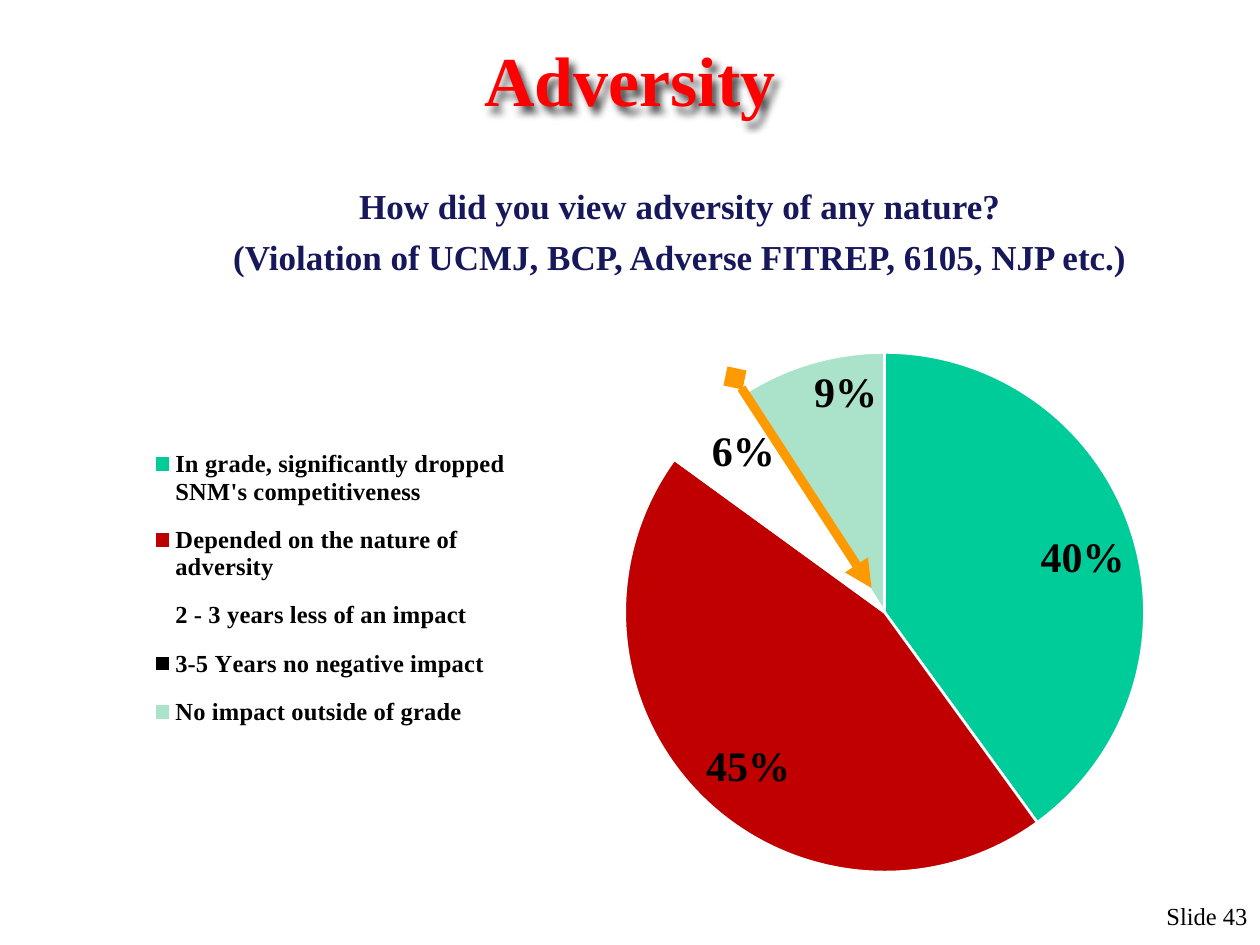
import pptx
import pptx.util
import pptx.chart.data
import pptx.dml.color
import pptx.enum.chart
import pptx.enum.shapes
import pptx.enum.text
import pptx.oxml
import pptx.oxml.ns

RGBColor = pptx.dml.color.RGBColor
Align = pptx.enum.text.PP_ALIGN
Anchor = pptx.enum.text.MSO_ANCHOR

RED = RGBColor(0xFF, 0x00, 0x00)
NAVY = RGBColor(0x17, 0x17, 0x5C)
BLACK = RGBColor(0x00, 0x00, 0x00)
WHITE = RGBColor(0xFF, 0xFF, 0xFF)
ORANGE = RGBColor(0xFF, 0x99, 0x00)
GREEN = RGBColor(0x00, 0xCC, 0x99)
CRIMSON = RGBColor(0xC0, 0x00, 0x00)
MINT = RGBColor(0xAA, 0xE2, 0xCA)
DARK_RED = RGBColor(0x8E, 0x00, 0x00)

ANSWERS = [
    ("In grade, significantly dropped SNM's competitiveness", 0.40, GREEN),
    ("Depended on the nature of adversity", 0.45, CRIMSON),
    ("2 - 3 years less of an impact", 0.06, WHITE),
    ("3-5 Years no negative impact", 0, BLACK),
    ("No impact outside of grade", 0.09, MINT),
]


def xml(text, prefix="a"):
    """Parse an element, declaring its namespace on the first tag."""
    tag_end = min(text.index(mark) for mark in " />" if mark in text[1:])
    return pptx.oxml.parse_xml(
        text[:tag_end] + " " + pptx.oxml.ns.nsdecls(prefix) + text[tag_end:])


class SlideBuilder:
    """Places elements on a grid of 120 columns by 90 rows."""

    FONT = "Times New Roman"
    COLUMNS, ROWS = 120, 90

    def __init__(self, deck):
        self.slide = deck.slides.add_slide(deck.slide_layouts[6])
        self.column = deck.slide_width / self.COLUMNS
        self.row = deck.slide_height / self.ROWS

    def grid(self, *lengths):
        units = (self.column, self.row) * 2
        return [round(length * unit) for length, unit in zip(lengths, units)]

    def style(self, font, size, color, bold=True):
        font.name = self.FONT
        font.size = pptx.util.Pt(size)
        font.bold = bold
        font.color.rgb = color

    def text(self, area, lines, size, color, align, bold=True,
             anchor=Anchor.TOP, gap=0):
        box = self.slide.shapes.add_textbox(*self.grid(*area))
        frame = box.text_frame
        frame.word_wrap = True
        frame.vertical_anchor = anchor
        frame.text = "\n".join(lines)
        for index, paragraph in enumerate(frame.paragraphs):
            paragraph.alignment = align
            if index:
                paragraph.space_before = pptx.util.Pt(gap)
            for run in paragraph.runs:
                self.style(run.font, size, color, bold)
        return box

    def title(self, area, wording):
        box = self.text(area, [wording], 40, RED, Align.CENTER, anchor=Anchor.MIDDLE)
        # Thin outline on the letters and a soft shadow behind them
        letters = box.text_frame.paragraphs[0].runs[0].font
        outline = xml(f'<a:ln w="9525"><a:solidFill><a:srgbClr val="{DARK_RED}"/>'
                      '</a:solidFill></a:ln>')
        letters._element.insert(0, outline)
        box._element.spPr.append(xml(
            '<a:effectLst><a:outerShdw blurRad="50800" dist="50800" dir="3000000">'
            '<a:srgbClr val="000000"><a:alpha val="70000"/></a:srgbClr>'
            '</a:outerShdw></a:effectLst>'))

    def layout(self, x, y, w, h, inner=False):
        target = '<c:layoutTarget val="inner"/>' if inner else ""
        return xml(
            f'<c:layout><c:manualLayout>{target}<c:xMode val="edge"/>'
            f'<c:yMode val="edge"/><c:x val="{x}"/><c:y val="{y}"/>'
            f'<c:w val="{w}"/><c:h val="{h}"/></c:manualLayout></c:layout>', "c")

    def pie(self, area, answers):
        names, shares, colors = zip(*answers)
        data = pptx.chart.data.CategoryChartData(number_format="0%")
        data.categories = names
        data.add_series("Series 1", shares)
        chart = self.slide.shapes.add_chart(
            pptx.enum.chart.XL_CHART_TYPE.PIE, *self.grid(*area), data).chart
        chart.has_title = False
        chart.font.name = "Arial"
        chart.font.size = pptx.util.Pt(10)
        chart.font.color.rgb = BLACK

        # Slices
        plot = chart.plots[0]
        plot.vary_by_categories = True
        for index, color in enumerate(colors):
            slice_format = plot.series[0].points[index].format
            slice_format.fill.solid()
            slice_format.fill.fore_color.rgb = color
            slice_format.line.color.rgb = WHITE
            slice_format.line.width = pptx.util.Pt(1.5)

        # Value labels; the format leaves zero unlabelled
        labels = plot.series[0].data_labels
        labels.show_value = True
        labels.show_percentage = False
        labels.number_format = "0%;;"
        labels.number_format_is_linked = False
        labels.position = pptx.enum.chart.XL_LABEL_POSITION.INSIDE_END
        self.style(labels.font, 24, BLACK)

        # Legend on the left, pie on the right
        chart.has_legend = True
        legend = chart.legend
        legend.position = pptx.enum.chart.XL_LEGEND_POSITION.LEFT
        legend.include_in_layout = False
        self.style(legend.font, 14, BLACK)
        for old in legend._element.findall(pptx.oxml.ns.qn("c:layout")):
            legend._element.remove(old)
        legend._element.find(pptx.oxml.ns.qn("c:legendPos")).addnext(
            self.layout(0.03, 0.24, 0.33, 0.52))
        plot_area = chart._chartSpace.chart.plotArea
        for old in plot_area.findall(pptx.oxml.ns.qn("c:layout")):
            plot_area.remove(old)
        plot_area.insert(0, self.layout(0.45, 0.11, 0.45, 0.86, inner=True))

    def arrow(self, start, end, color, width):
        connector = self.slide.shapes.add_connector(
            pptx.enum.shapes.MSO_CONNECTOR.STRAIGHT, *self.grid(*start, *end))
        connector.line.color.rgb = color
        connector.line.width = pptx.util.Pt(width)
        line = connector.line._get_or_add_ln()
        line.append(xml('<a:headEnd type="diamond"/>'))
        line.append(xml('<a:tailEnd type="triangle"/>'))
        connector._element.spPr.append(xml("<a:effectLst/>"))


def main():
    deck = pptx.Presentation()
    deck.slide_width = pptx.util.Inches(10)
    deck.slide_height = pptx.util.Inches(7.5)
    builder = SlideBuilder(deck)

    # Slide number, title and question
    builder.text((91.25, 85.25, 28.75, 4.75), ["Slide 43"], 14, BLACK,
                 Align.RIGHT, bold=False)
    builder.title((0, 4, 120, 7), "Adversity")
    builder.text((14.25, 17, 101, 8),
                 ["How did you view adversity of any nature?",
                  "(Violation of UCMJ, BCP, Adverse FITREP, 6105, NJP etc.)"],
                 20, NAVY, Align.CENTER, gap=5)

    # Answers, with an arrow along the empty slice
    builder.pie((10, 27, 110, 58), ANSWERS)
    builder.arrow((70, 36), (83, 56), ORANGE, 5.25)

    deck.save("out.pptx")


if __name__ == "__main__":
    main()
